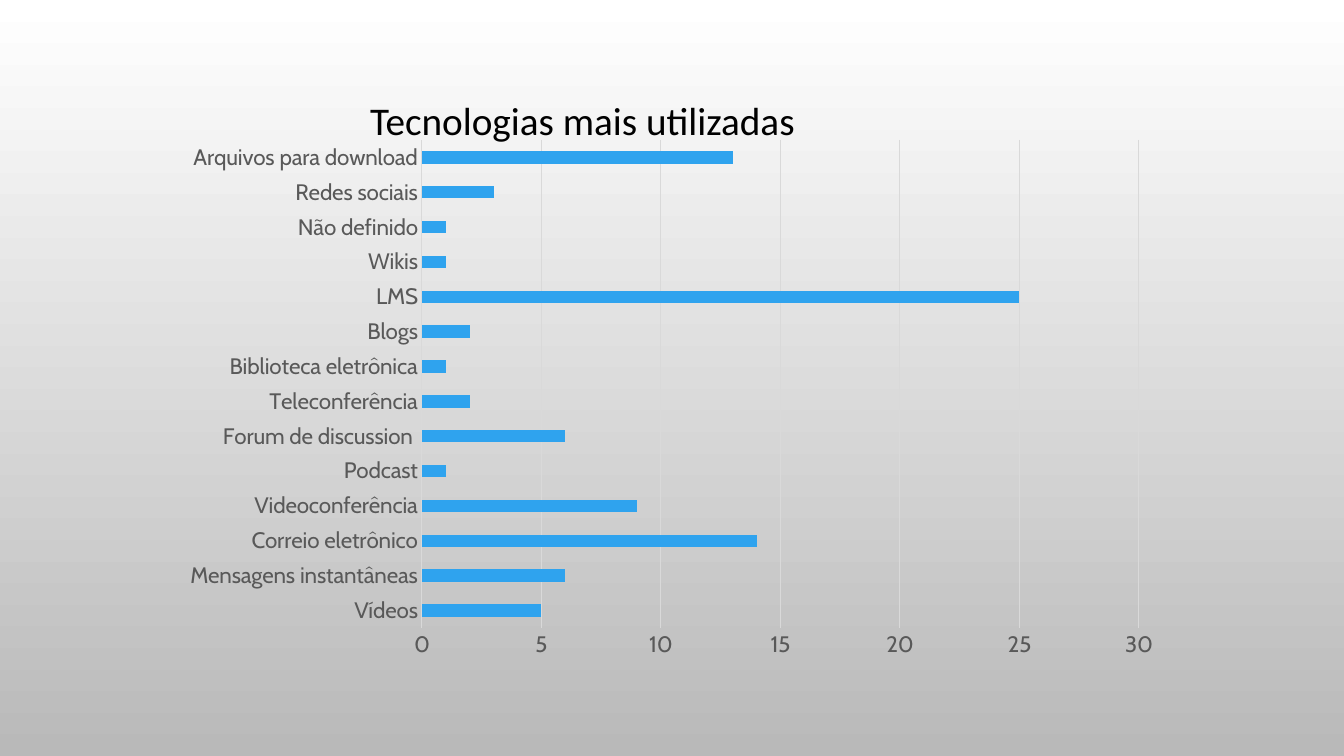
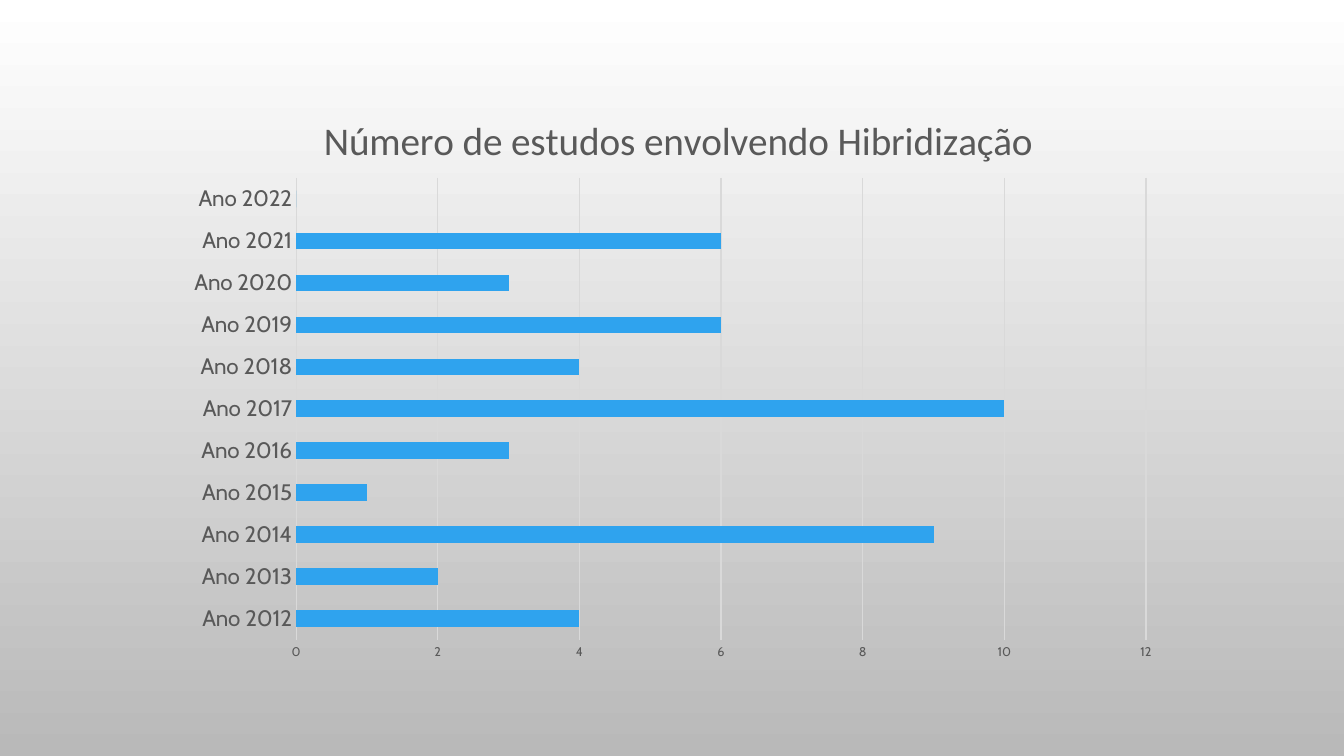
from pptx import Presentation
from pptx.chart.data import CategoryChartData
from pptx.dml.color import RGBColor
from pptx.enum.chart import XL_CHART_TYPE, XL_TICK_MARK
from pptx.enum.text import MSO_ANCHOR, PP_ALIGN
from pptx.oxml import parse_xml
from pptx.oxml.ns import nsdecls, qn
from pptx.util import Pt

EMU_PER_PX = 914400 / 100.8
SLIDE_SIZE = (1344, 756)
BACKGROUND = ("FFFFFF", "B9B9B9")
BLACK, GREY, LIGHT_GREY, BLUE = "000000", "595959", "D9D9D9", "2FA3EE"
BODY_FONT, TITLE_FONT, TITLE_SIZE = "Cabin", "Calibri", 28
TITLE_ONLY, BLANK = 5, 6

# Boxes are left, top, width, height in px on the slide.
TECHNOLOGIES = {
    "box": (170, 129, 1003, 540),
    "plot": (422, 140, 717, 488),
    "values": [
        ("Vídeos", 5), ("Mensagens instantâneas", 6), ("Correio eletrônico", 14),
        ("Videoconferência", 9), ("Podcast", 1), ("Forum de discussion ", 6),
        ("Teleconferência", 2), ("Biblioteca eletrônica", 1), ("Blogs", 2),
        ("LMS", 25), ("Wikis", 1), ("Não definido", 1), ("Redes sociais", 3),
        ("Arquivos para download", 13),
    ],
    "maximum": 30, "step": 5, "gap": 182, "value_size": 16, "axis_line": True,
}
STUDIES = {
    "box": (175, 93, 997, 579),
    "plot": (296, 178, 850, 462),
    "values": [(f"Ano {2012 + index}", count) for index, count in
               enumerate([4, 2, 9, 1, 3, 10, 4, 6, 3, 6, 0])],
    "maximum": 12, "step": 2, "gap": 150, "value_size": 9, "axis_line": False,
}
TECHNOLOGIES_TITLE = ("Tecnologias mais utilizadas", (360, 91, 567, 57))
STUDIES_TITLE = ("Número de estudos envolvendo Hibridização", (317, 107))


def px(length):
    return round(length * EMU_PER_PX)


def color(value):
    return RGBColor.from_string(value)


def style_font(font, size, value, name=BODY_FONT):
    font.size, font.name, font.bold = Pt(size), name, False
    font.color.rgb = color(value)


def style_line(line, value):
    line.color.rgb = color(value)
    line.width = Pt(0.75)


def set_layout(element, index, chart_box, area):
    """Fix a chart part at a slide position, as fractions of the chart."""
    for old in element.findall(qn("c:layout")):
        element.remove(old)
    left, top, width, height = chart_box
    fractions = {"x": (area[0] - left) / width, "y": (area[1] - top) / height}
    inner = ""
    if len(area) == 4:
        inner = '<c:layoutTarget val="inner"/>'
        fractions.update(w=area[2] / width, h=area[3] / height)
    modes = "".join(f'<c:{key}Mode val="edge"/>' for key in "xy")
    values = "".join(f'<c:{key} val="{value:.4f}"/>' for key, value in fractions.items())
    element.insert(index, parse_xml(
        f'<c:layout {nsdecls("c")}><c:manualLayout>{inner}{modes}{values}'
        '</c:manualLayout></c:layout>'))


def no_fill():
    return parse_xml(f'<c:spPr {nsdecls("c", "a")}><a:noFill/><a:ln><a:noFill/></a:ln></c:spPr>')


def add_bar_chart(slide, spec_data):
    data = CategoryChartData()
    names, values = zip(*spec_data["values"])
    data.categories = names
    data.add_series("Series 1", values)
    chart = slide.shapes.add_chart(
        XL_CHART_TYPE.BAR_CLUSTERED, *map(px, spec_data["box"]), data).chart
    chart.has_legend = chart.has_title = False
    style_font(chart.font, 16, BLACK)

    plot = chart.plots[0]
    plot.gap_width = spec_data["gap"]
    plot.vary_by_categories = False
    fill = plot.series[0].format.fill
    fill.solid()
    fill.fore_color.rgb = color(BLUE)

    category_axis, value_axis = chart.category_axis, chart.value_axis
    for axis, size in ((category_axis, 16), (value_axis, spec_data["value_size"])):
        axis.major_tick_mark = axis.minor_tick_mark = XL_TICK_MARK.NONE
        style_font(axis.tick_labels.font, size, GREY)
        axis.format.line.fill.background()
    if spec_data["axis_line"]:
        style_line(category_axis.format.line, LIGHT_GREY)
    category_axis.has_major_gridlines = False
    value_axis.has_major_gridlines = True
    style_line(value_axis.major_gridlines.format.line, LIGHT_GREY)
    value_axis.minimum_scale = 0
    value_axis.maximum_scale = spec_data["maximum"]
    value_axis.major_unit = spec_data["step"]

    chart_element = chart._chartSpace.find(qn("c:chart"))
    plot_area = chart_element.find(qn("c:plotArea"))
    set_layout(plot_area, 0, spec_data["box"], spec_data["plot"])
    plot_area.append(no_fill())
    chart_element.addnext(no_fill())
    return chart


def set_title(text_frame, text, value):
    paragraph = text_frame.paragraphs[0]
    run = paragraph.add_run()
    run.text = text
    style_font(run.font, TITLE_SIZE, value, TITLE_FONT)
    return paragraph


def build_technologies(presentation):
    slide = presentation.slides.add_slide(presentation.slide_layouts[TITLE_ONLY])
    add_bar_chart(slide, TECHNOLOGIES)
    text, box = TECHNOLOGIES_TITLE
    title = slide.shapes.title
    title.left, title.top, title.width, title.height = map(px, box)
    title.text_frame.vertical_anchor = MSO_ANCHOR.TOP
    title.text_frame.word_wrap = True
    set_title(title.text_frame, text, BLACK).alignment = PP_ALIGN.LEFT


def build_studies(presentation):
    slide = presentation.slides.add_slide(presentation.slide_layouts[BLANK])
    chart = add_bar_chart(slide, STUDIES)
    text, position = STUDIES_TITLE
    chart.has_title = True
    set_title(chart.chart_title.text_frame, text, GREY)
    set_layout(chart.chart_title._element, 1, STUDIES["box"], position)


def main():
    presentation = Presentation()
    presentation.slide_width, presentation.slide_height = map(px, SLIDE_SIZE)
    fill = presentation.slide_master.background.fill
    fill.gradient()
    fill.gradient_angle = 270
    for stop, value in zip(fill.gradient_stops, BACKGROUND):
        stop.color.rgb = color(value)
    build_technologies(presentation)
    build_studies(presentation)
    presentation.save("out.pptx")


if __name__ == "__main__":
    main()
